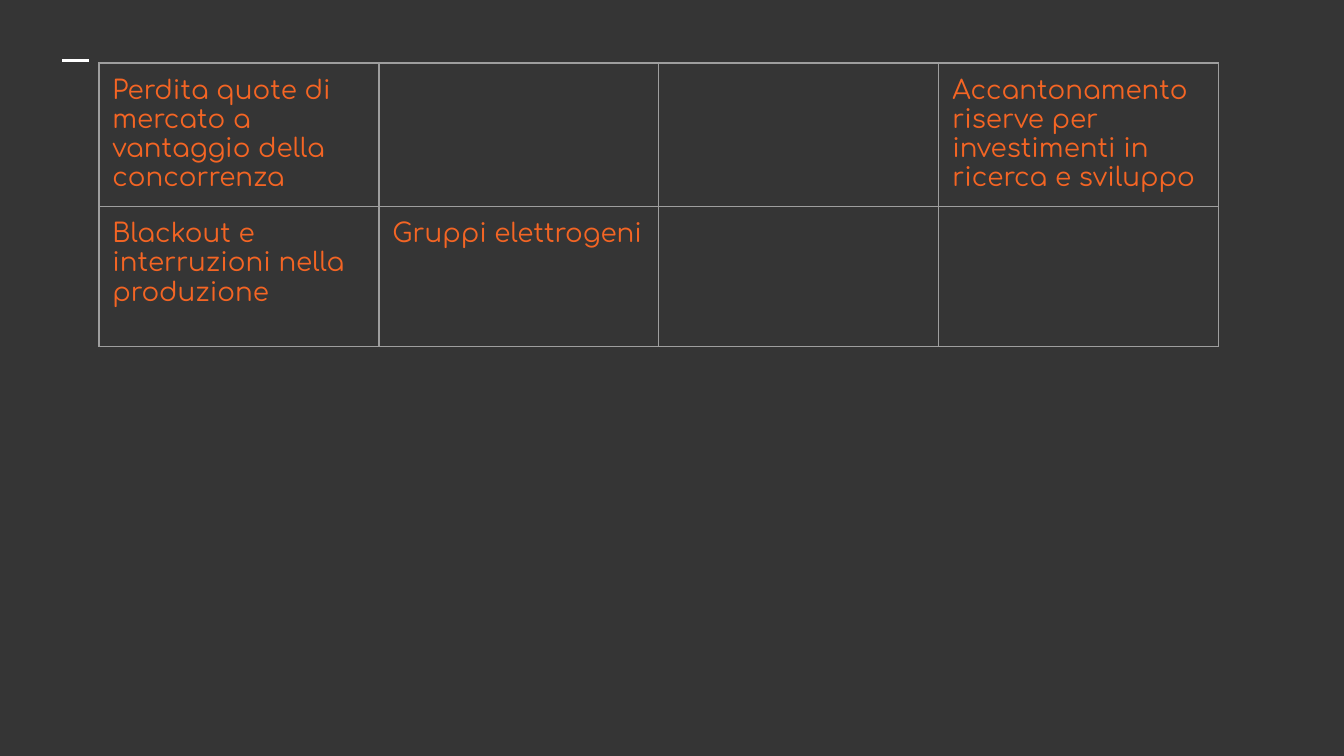
from pptx import Presentation
from pptx.dml.color import RGBColor
from pptx.enum.shapes import MSO_CONNECTOR as Connector
from pptx.oxml.ns import qn
from pptx.util import Pt
from lxml.etree import SubElement

BACKGROUND, ACCENT, BORDER, WHITE = "353535", "F46524", "9E9E9E", "FFFFFF"
RISKS = [
    ["Perdita quote di mercato a vantaggio della concorrenza", "", "",
     "Accantonamento riserve per investimenti in ricerca e sviluppo"],
    ["Blackout e interruzioni nella produzione", "Gruppi elettrogeni", "", ""],
]


def color(value):
    return RGBColor.from_string(value)


def write(text_frame, text, size=14, font="Comfortaa", fill=ACCENT):
    paragraph = text_frame.paragraphs[0]
    run = paragraph.add_run()
    run.text = text
    run.font.size = Pt(size)
    run.font.name = font
    run.font.color.rgb = color(fill)


def add_borders(cell, value, width):
    properties = cell._tc.get_or_add_tcPr()
    for side in ("a:lnL", "a:lnR", "a:lnT", "a:lnB"):
        line = SubElement(properties, qn(side), w=str(Pt(width)))
        fill = SubElement(line, qn("a:solidFill"))
        SubElement(fill, qn("a:srgbClr"), val=value)


def add_accent_line(slide, left, top, width):
    line = slide.shapes.add_connector(
        Connector.STRAIGHT, Pt(left), Pt(top), Pt(left + width), Pt(top))
    line.line.color.rgb = color(WHITE)
    line.line.width = Pt(1.5)
    SubElement(line._element.spPr, qn("a:effectLst"))


def add_risk_table(slide, left, top, width, height):
    table = slide.shapes.add_table(
        len(RISKS), len(RISKS[0]), Pt(left), Pt(top), Pt(width), Pt(height)).table
    table.first_row = table.horz_banding = False
    for row, texts in enumerate(RISKS):
        for column, text in enumerate(texts):
            cell = table.cell(row, column)
            cell.margin_left = cell.margin_right = Pt(7.2)
            cell.margin_top = cell.margin_bottom = Pt(7.2)
            add_borders(cell, BORDER, 0.75)
            cell.fill.background()
            if text:
                write(cell.text_frame, text)


def main():
    presentation = Presentation()
    presentation.slide_width, presentation.slide_height = Pt(720), Pt(405)
    slide = presentation.slides.add_slide(presentation.slide_layouts[6])
    slide.background.fill.solid()
    slide.background.fill.fore_color.rgb = color(BACKGROUND)

    # Short line at the top left
    add_accent_line(slide, 33.5, 32.5, 14.25)
    # Table of risks and measures
    add_risk_table(slide, 53, 33.75, 600, 150)

    presentation.save("out.pptx")


if __name__ == "__main__":
    main()
